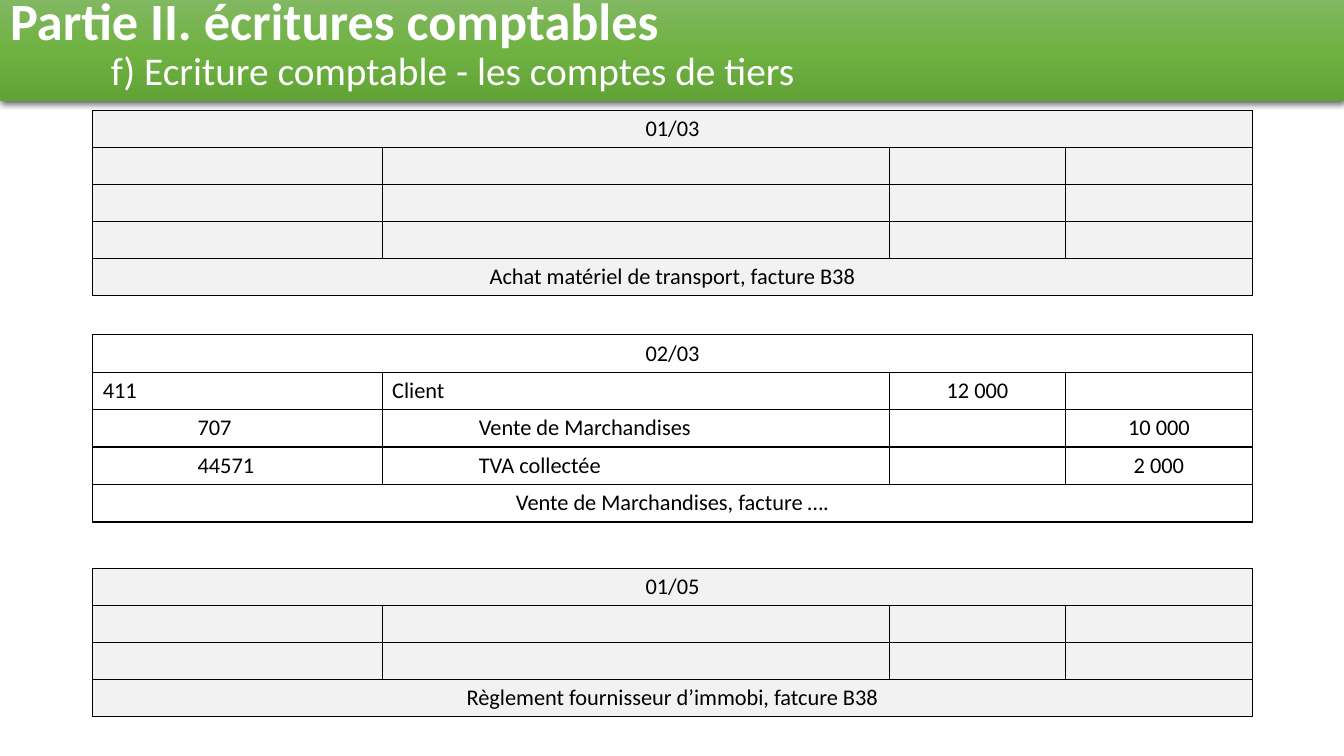
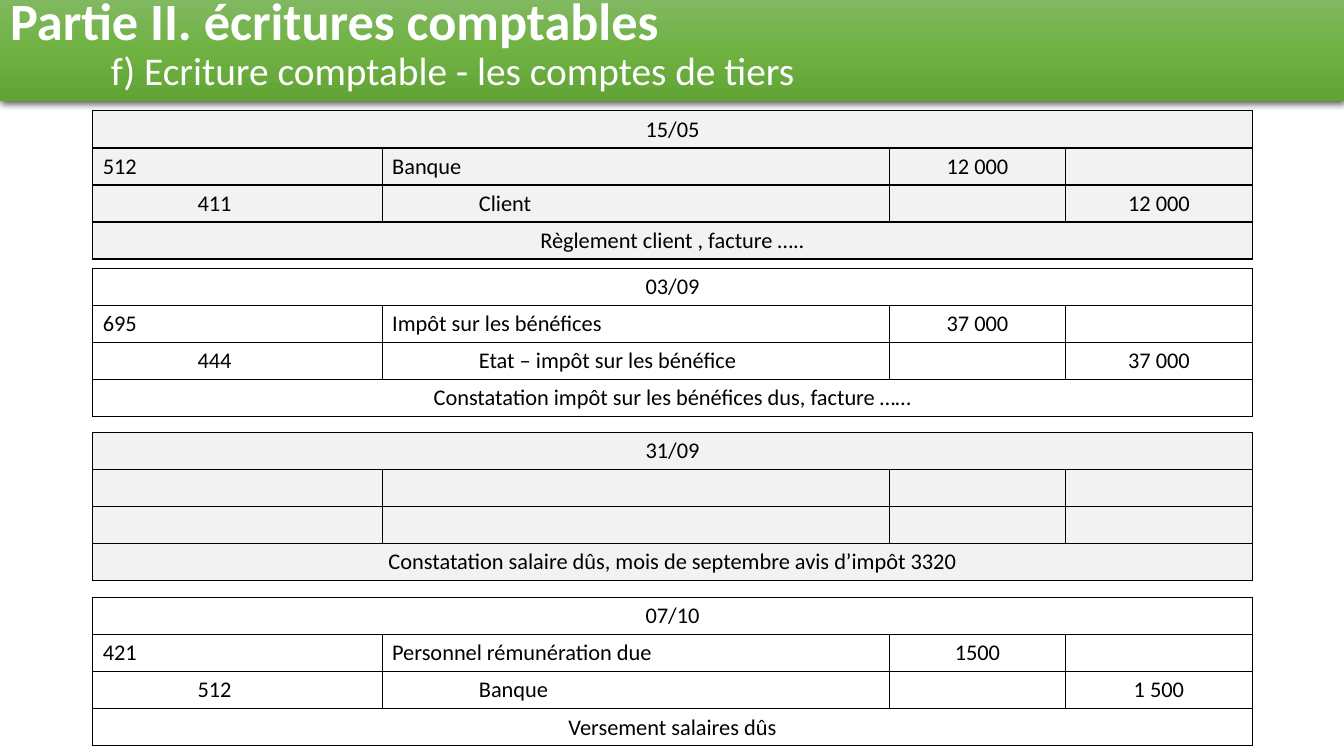
import pptx
import pptx.util
import pptx.dml.color
import pptx.enum.text
from lxml import etree

Inches, Pt = pptx.util.Inches, pptx.util.Pt
RGB = pptx.dml.color.RGBColor.from_string
ALIGN = pptx.enum.text.PP_ALIGN
MIDDLE = pptx.enum.text.MSO_ANCHOR.MIDDLE
NS = 'xmlns:a="http://schemas.openxmlformats.org/drawingml/2006/main"'
FONT = "Calibri"
COLORS = {"top": "81B861", "mid": "6FB242", "low": "62A336",
          "white": "FFFFFF", "gray": "F2F2F2", "black": "000000"}

HEADS = [("Partie II. écritures comptables", 37.4, True),
         ("f) Ecriture comptable - les comptes de tiers", 28.1, False)]
COLS = [0.94, 1.93, 0.86, 4.17, 1.75, 1.85]
LEFT = 0.92
BLANK = ("", "", "")

# Each entry: top, height, fill, date, lines (debit first, then credits), caption
SLIDES = [
    [
        (1.1, 1.83, "gray", "01/03", [BLANK] * 3,
         "Achat matériel de transport, facture B38"),
        (3.32, 1.86, "white", "02/03",
         [("411", "Client", "12 000"),
          ("707", "Vente de Marchandises", "10 000"),
          ("44571", "TVA collectée", "2 000")],
         "Vente de Marchandises, facture …."),
        (5.64, 1.47, "gray", "01/05", [BLANK] * 2,
         "Règlement fournisseur d’immobi, fatcure B38"),
    ],
    [
        (1.1, 1.47, "gray", "15/05",
         [("512", "Banque", "12 000"), ("411", "Client", "12 000")],
         "Règlement client , facture ….."),
        (2.66, 1.47, "white", "03/09",
         [("695", "Impôt sur les bénéfices", "37 000"),
          ("444", "Etat – impôt sur les bénéfice", "37 000")],
         "Constatation impôt sur les bénéfices dus, facture ……"),
        (4.29, 1.47, "gray", "31/09", [BLANK] * 2,
         "Constatation salaire dûs, mois de septembre avis d’impôt 3320"),
        (5.93, 1.47, "white", "07/10",
         [("421", "Personnel rémunération due", "1500"),
          ("512", "Banque", "1 500")],
         "Versement salaires dûs"),
    ],
]


def band(slide):
    """Turn the title into the green band."""
    title = slide.shapes.title
    title.left = title.top = 0
    title.width, title.height = Inches(13.33), Inches(1)
    stops = "".join(
        f'<a:gs pos="{pos}"><a:srgbClr val="{COLORS[key]}"/></a:gs>'
        for pos, key in [(0, "top"), (50000, "mid"), (100000, "low")])
    props = title.element.spPr
    for xml in (
        f'<a:prstGeom {NS} prst="rect"><a:avLst/></a:prstGeom>',
        f'<a:gradFill {NS} rotWithShape="1"><a:gsLst>{stops}</a:gsLst>'
        '<a:lin ang="5400000" scaled="0"/></a:gradFill>',
        f'<a:effectLst {NS}><a:outerShdw blurRad="{Pt(4.5)}" dist="{Pt(1.5)}" '
        f'dir="5400000" rotWithShape="0"><a:srgbClr val="{COLORS["black"]}">'
        '<a:alpha val="63000"/></a:srgbClr></a:outerShdw></a:effectLst>',
    ):
        props.append(etree.fromstring(xml))

    frame = title.text_frame
    frame.auto_size = pptx.enum.text.MSO_AUTO_SIZE.NONE
    frame.word_wrap = True
    frame.vertical_anchor = MIDDLE
    frame.margin_bottom = Inches(0.08)
    frame.text = "\n".join(head[0] for head in HEADS)
    for par, (_, size, bold) in zip(frame.paragraphs, HEADS):
        par.alignment = ALIGN.LEFT
        par.line_spacing = 0.7
        par.font.name, par.font.size, par.font.bold = FONT, Pt(size), bold
        par.font.color.rgb = RGB(COLORS["white"])
    sub = frame.paragraphs[1]
    sub.space_before = Pt(6.5)
    sub._p.get_or_add_pPr().set("marL", str(Inches(1)))


def dress(cell, fill, align, skip):
    """Border, fill and font of a cell; skip names the side without a line."""
    props = cell._tc.get_or_add_tcPr()
    for side in "LRTB":
        paint = ("<a:noFill/>" if side == skip else
                 f'<a:solidFill><a:srgbClr val="{COLORS["black"]}"/></a:solidFill>')
        props.append(etree.fromstring(
            f'<a:ln{side} {NS} w="{Pt(1)}">{paint}</a:ln{side}>'))
    cell.fill.solid()
    cell.fill.fore_color.rgb = RGB(COLORS[fill])
    cell.margin_top = cell.margin_bottom = Inches(0.03)
    cell.vertical_anchor = MIDDLE
    par = cell.text_frame.paragraphs[0]
    par.alignment = align
    par.font.name, par.font.size = FONT, Pt(16)
    par.font.color.rgb = RGB(COLORS["black"])


deck = pptx.Presentation()
deck.slide_width, deck.slide_height = Inches(13.33), Inches(7.5)

for entries in SLIDES:
    slide = deck.slides.add_slide(deck.slide_layouts[5])
    band(slide)

    for top, height, fill, date, lines, note in entries:
        count = len(lines) + 2
        table = slide.shapes.add_table(
            count, len(COLS), Inches(LEFT), Inches(top),
            Inches(sum(COLS)), Inches(height)).table
        table.first_row = table.horz_banding = False
        for col, width in zip(table.columns, COLS):
            col.width = Inches(width)

        # Cell style: a credit line hides the border before its indented text
        for row in range(count):
            full = row in (0, count - 1)
            for col in range(len(COLS)):
                skip = "RLRL"[col] if row > 1 and not full and col < 4 else ""
                align = ALIGN.CENTER if full or col > 3 else ALIGN.LEFT
                dress(table.cell(row, col), fill, align, skip)

        # Date and caption span the whole width, a debit spans pairs of columns
        for row, first, last in ((0, 0, 5), (count - 1, 0, 5), (1, 0, 1), (1, 2, 3)):
            table.cell(row, first).merge(table.cell(row, last))

        # Debit in the outer columns, credits in the inner ones
        words = {(0, 0): date, (count - 1, 0): note}
        for row, line in enumerate(lines, 1):
            spots = (0, 2, 4) if row == 1 else (1, 3, 5)
            words.update({(row, col): text for col, text in zip(spots, line)})
        for (row, col), text in words.items():
            if text:
                table.cell(row, col).text_frame.paragraphs[0].text = text

deck.save("out.pptx")
